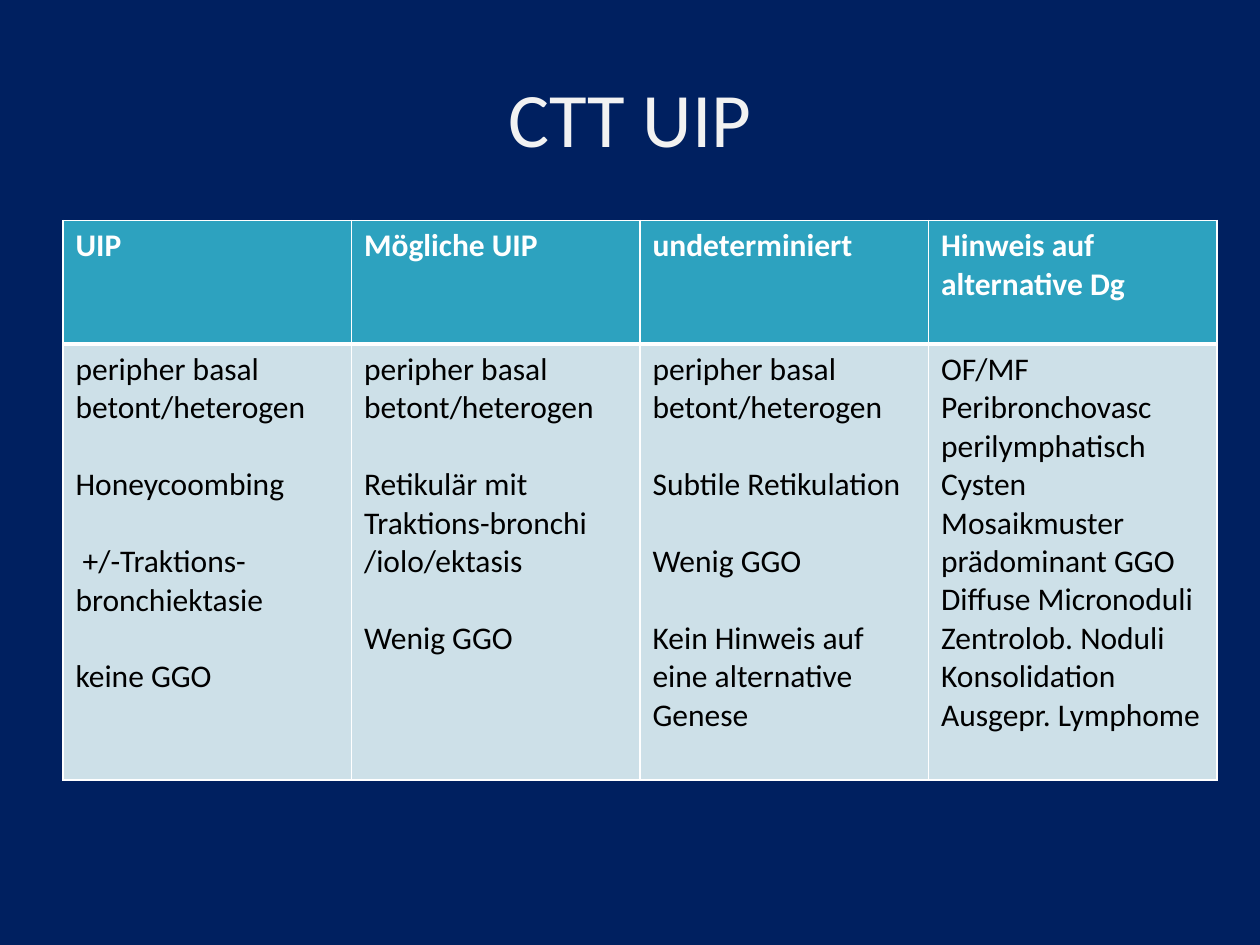
from lxml import etree
from pptx import Presentation
from pptx.dml.color import RGBColor
from pptx.enum.text import MSO_ANCHOR, PP_ALIGN
from pptx.oxml.ns import qn
from pptx.util import Inches, Pt

CENTER = PP_ALIGN.CENTER
MIDDLE = MSO_ANCHOR.MIDDLE

FONT = "Calibri"
NAVY, TEAL, PALE = "002060", "2DA2BF", "CDE0E8"
WHITE, OFF_WHITE, BLACK = "FFFFFF", "F2F2F2", "000000"
COLUMN_WIDTH = 2.29
ROW_HEIGHTS = (0.98, 3.46)
GROUP_GAP = Pt(22)
THIN, THICK = 1, 3

# Each column: heading, then groups of paragraphs separated by a gap.
COLUMNS = [
    ("UIP", [
        ["peripher basal betont/heterogen"],
        ["Honeycoombing"],
        [" +/-Traktions-bronchiektasie"],
        ["keine GGO"],
    ]),
    ("Mögliche UIP", [
        ["peripher basal betont/heterogen"],
        ["Retikulär mit Traktions-bronchi", "/iolo/ektasis"],
        ["Wenig GGO"],
    ]),
    ("undeterminiert", [
        ["peripher basal betont/heterogen"],
        ["Subtile Retikulation"],
        ["Wenig GGO"],
        ["Kein Hinweis auf eine alternative Genese"],
    ]),
    ("Hinweis auf alternative Dg", [
        ["OF/MF", "Peribronchovasc", "perilymphatisch", "Cysten",
         "Mosaikmuster", "prädominant GGO", "Diffuse Micronoduli",
         "Zentrolob. Noduli", "Konsolidation", "Ausgepr. Lymphome"],
    ]),
]


def rgb(color):
    return RGBColor.from_string(color)


def write_paragraph(para, text, size, color, bold=False):
    para.text = text
    for span in para.runs:
        span.font.name = FONT
        span.font.size = Pt(size)
        span.font.bold = bold
        span.font.color.rgb = rgb(color)


def add_title(page, text):
    box = page.shapes.add_textbox(Inches(0.5), Inches(0.3), Inches(9), Inches(1.25))
    frame = box.text_frame
    frame.word_wrap = True
    frame.vertical_anchor = MIDDLE
    para = frame.paragraphs[0]
    para.alignment = CENTER
    write_paragraph(para, text, 44, OFF_WHITE)


def set_borders(cell, top, bottom):
    """Draw white cell borders; the lines must precede the fill in tcPr."""
    properties = cell._tc.get_or_add_tcPr()
    sides = {"lnL": THIN, "lnR": THIN, "lnT": top, "lnB": bottom}
    for position, (side, width) in enumerate(sides.items()):
        line = etree.Element(qn(f"a:{side}"), w=str(Pt(width)))
        fill = etree.SubElement(line, qn("a:solidFill"))
        etree.SubElement(fill, qn("a:srgbClr"), val=WHITE)
        properties.insert(position, line)


def fill_cell(cell, groups, fill, color, bold=False):
    cell.fill.solid()
    cell.fill.fore_color.rgb = rgb(fill)
    frame = cell.text_frame
    frame.text = "\n".join(text for group in groups for text in group)
    paragraphs = iter(frame.paragraphs)
    for group_index, group in enumerate(groups):
        for line_index, text in enumerate(group):
            para = next(paragraphs)
            write_paragraph(para, text, 18, color, bold)
            if group_index and not line_index:
                para.space_before = GROUP_GAP


def add_criteria_table(page):
    frame = page.shapes.add_table(
        len(ROW_HEIGHTS), len(COLUMNS), Inches(0.5), Inches(1.75),
        Inches(COLUMN_WIDTH * len(COLUMNS)), Inches(sum(ROW_HEIGHTS)))
    table = frame.table
    for row, height in zip(table.rows, ROW_HEIGHTS):
        row.height = Inches(height)
    for index, (heading, groups) in enumerate(COLUMNS):
        table.columns[index].width = Inches(COLUMN_WIDTH)
        header, body = table.cell(0, index), table.cell(1, index)
        fill_cell(header, [[heading]], TEAL, WHITE, bold=True)
        set_borders(header, top=THIN, bottom=THICK)
        fill_cell(body, groups, PALE, BLACK)
        set_borders(body, top=THICK, bottom=THIN)


def main():
    deck = Presentation()
    deck.slide_width, deck.slide_height = Inches(10), Inches(7.5)
    page = deck.slides.add_slide(deck.slide_layouts[6])
    page.background.fill.solid()
    page.background.fill.fore_color.rgb = rgb(NAVY)
    add_title(page, "CTT UIP")
    add_criteria_table(page)
    deck.save("out.pptx")


if __name__ == "__main__":
    main()
